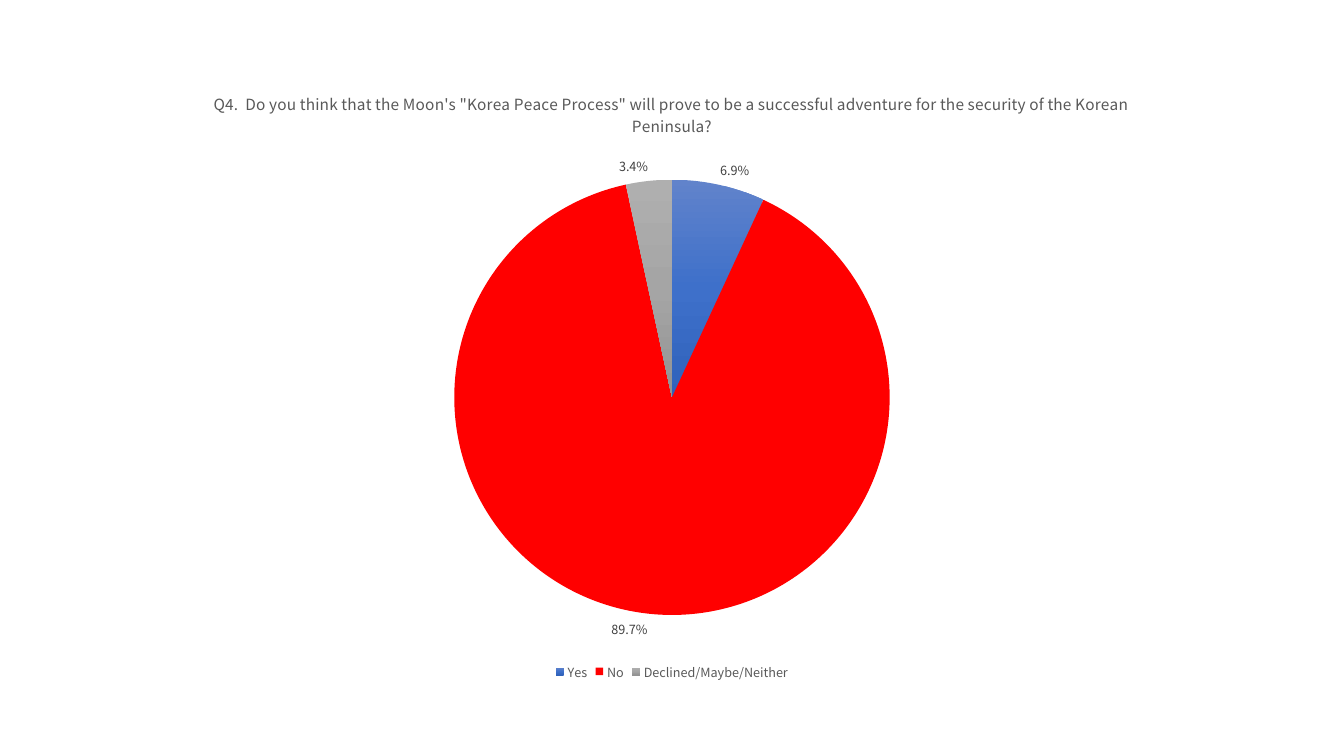
from dataclasses import dataclass

from lxml.etree import SubElement
from pptx import Presentation
from pptx.chart.data import CategoryChartData
from pptx.dml.color import RGBColor
from pptx.enum.chart import XL_CHART_TYPE, XL_LABEL_POSITION, XL_LEGEND_POSITION
from pptx.oxml import parse_xml
from pptx.oxml.ns import nsdecls, qn
from pptx.util import Inches, Pt


@dataclass(frozen=True)
class Theme:
    font: str = "Noto Sans CJK KR"
    title_size: float = 11
    small_size: float = 9
    muted: str = "595959"
    label: str = "404040"
    yes: tuple = ("6183CB", "3E70CA", "3062BB")
    no: tuple = ("FF0000",)
    other: tuple = ("AFAFAF", "A5A5A5", "939393")


THEME = Theme()
SLIDE_WIDTH, SLIDE_HEIGHT = Inches(13.33), Inches(7.5)
# Shares of the slide: left, top, width, height
CHART_AREA = (0.0525, 0.0933, 0.895, 0.812)
# Shares of the chart
PIE_AREA = {"x": 0.319, "y": 0.177, "w": 0.362, "h": 0.711}

# An em space sets the question number apart
QUESTION = (
    "Q4.  Do you think that the Moon's \"Korea Peace Process\" will prove to be "
    "a successful adventure for the security of the Korean Peninsula?"
)
ANSWERS = {
    "Yes": (0.069, THEME.yes),
    "No": (0.897, THEME.no),
    "Declined/Maybe/Neither": (0.034, THEME.other),
}


def style_font(font, size, color):
    values = {"name": THEME.font, "size": Pt(size), "bold": False}
    for name, value in values.items():
        setattr(font, name, value)
    font.color.rgb = RGBColor.from_string(color)


def fill_slice(point, colors):
    """One colour gives a solid slice, several an even downward gradient."""
    line = point.format.line
    line.fill.background()
    if len(colors) == 1:
        point.format.fill.solid()
        point.format.fill.fore_color.rgb = RGBColor.from_string(colors[0])
        return
    step = 100000 // (len(colors) - 1)
    stops = "".join(
        f'<a:gs pos="{index * step}"><a:srgbClr val="{color}"/></a:gs>'
        for index, color in enumerate(colors)
    )
    gradient = parse_xml(
        f'<a:gradFill {nsdecls("a")} rotWithShape="1"><a:gsLst>{stops}</a:gsLst>'
        '<a:lin ang="5400000" scaled="0"/></a:gradFill>'
    )
    line._get_or_add_ln().addprevious(gradient)


def add_title(chart, text):
    chart.has_title = True
    chart.chart_title.include_in_layout = False
    para = chart.chart_title.text_frame.paragraphs[0]
    span = para.add_run()
    span.text = text
    style_font(span.font, THEME.title_size, THEME.muted)


def add_legend(chart):
    chart.has_legend = True
    chart.legend.position = XL_LEGEND_POSITION.BOTTOM
    chart.legend.include_in_layout = False
    style_font(chart.legend.font, THEME.small_size, THEME.muted)


def add_labels(plot):
    plot.has_data_labels = True
    labels = plot.data_labels
    values = {
        "show_value": True,
        "show_percentage": False,
        "number_format": "0.0%",
        "number_format_is_linked": False,
        "position": XL_LABEL_POSITION.OUTSIDE_END,
    }
    for name, value in values.items():
        setattr(labels, name, value)
    style_font(labels.font, THEME.small_size, THEME.label)


def place_pie(chart, area):
    plot_area = chart._chartSpace.chart.plotArea
    layout = plot_area.find(qn("c:layout"))
    if layout is None:
        layout = parse_xml(f'<c:layout {nsdecls("c")}/>')
        plot_area.insert(0, layout)
    manual = SubElement(layout, qn("c:manualLayout"))
    settings = {"layoutTarget": "inner", "xMode": "edge", "yMode": "edge", **area}
    for name, value in settings.items():
        SubElement(manual, qn(f"c:{name}")).set("val", str(value))


def add_pie(page, title, answers):
    data = CategoryChartData(number_format="0.0%")
    data.categories = list(answers)
    data.add_series(title, [share for share, _ in answers.values()])
    left, top, width, height = CHART_AREA
    chart = page.shapes.add_chart(
        XL_CHART_TYPE.PIE,
        int(left * SLIDE_WIDTH), int(top * SLIDE_HEIGHT),
        int(width * SLIDE_WIDTH), int(height * SLIDE_HEIGHT),
        data,
    ).chart
    chart.font.name = THEME.font
    plot = chart.plots[0]
    plot.vary_by_categories = True
    for index, (_, colors) in enumerate(answers.values()):
        fill_slice(plot.series[0].points[index], colors)
    add_title(chart, title)
    add_legend(chart)
    add_labels(plot)
    place_pie(chart, PIE_AREA)


def main():
    deck = Presentation()
    deck.slide_width, deck.slide_height = SLIDE_WIDTH, SLIDE_HEIGHT
    page = deck.slides.add_slide(deck.slide_layouts[6])
    add_pie(page, QUESTION, ANSWERS)
    deck.save("out.pptx")


if __name__ == "__main__":
    main()
